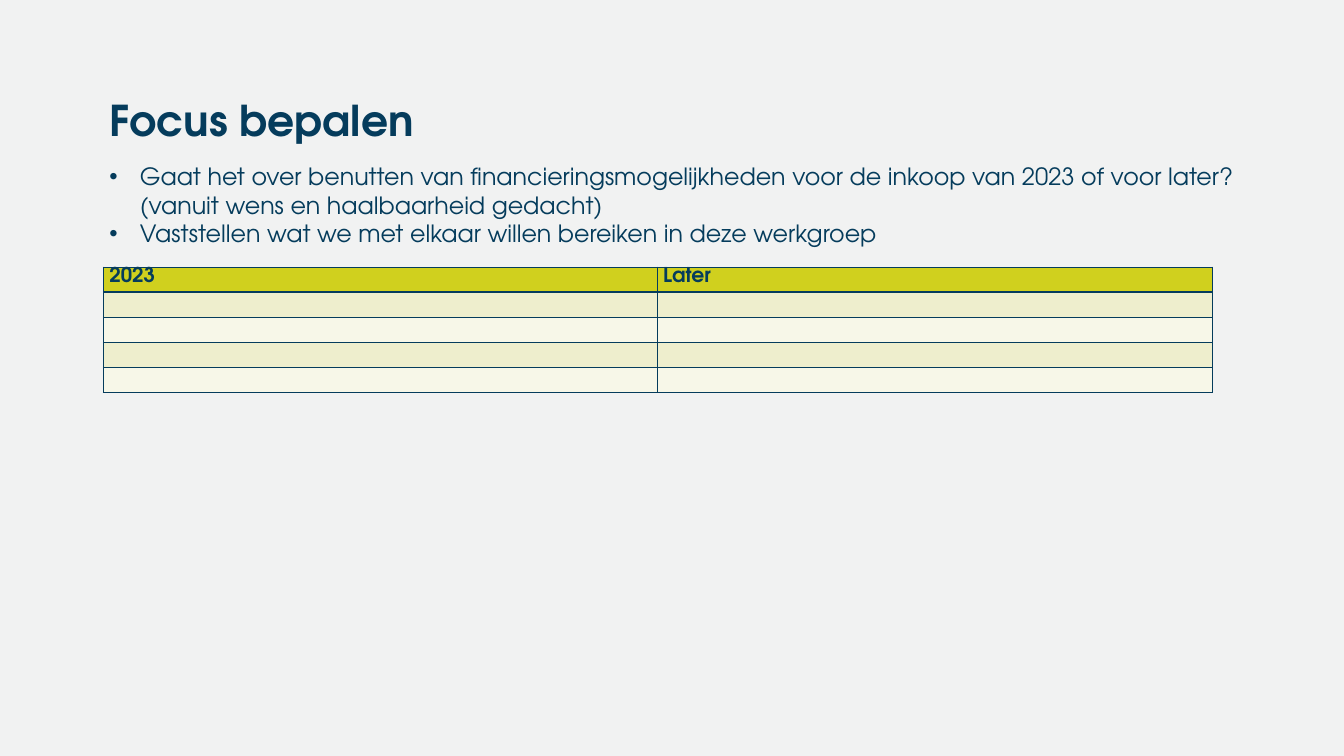
from lxml import etree
from pptx import Presentation
from pptx import util as u
from pptx.dml.color import RGBColor
from pptx.enum import text
from pptx.oxml import ns

NAVY = RGBColor(0x05, 0x3C, 0x5C)
LIME = RGBColor(0xD0, 0xD0, 0x1E)
SAND = RGBColor(0xEE, 0xEE, 0xCD)
CREAM = RGBColor(0xF7, 0xF7, 0xE8)
GREY = RGBColor(0xF1, 0xF2, 0xF2)
FONT = "TeX Gyre Adventor"


class Page:
    """Holds the style and the current slide."""

    def __init__(self, deck):
        self.slide = deck.slides.add_slide(deck.slide_layouts[6])
        fill = self.slide.background.fill
        fill.solid()
        fill.fore_color.rgb = GREY

    def style(self, para, size, bold=False):
        for run in para.runs:
            run.font.name = FONT
            run.font.size = u.Pt(size)
            run.font.bold = bold
            run.font.color.rgb = NAVY

    def bullet(self, para):
        props = para._p.get_or_add_pPr()
        props.set("marL", str(u.Inches(0.5)))
        props.set("indent", str(u.Inches(-0.5)))
        color = etree.SubElement(props, ns.qn("a:buClr"))
        etree.SubElement(color, ns.qn("a:srgbClr"), val=str(NAVY))
        etree.SubElement(props, ns.qn("a:buFont"), typeface="Arial")
        etree.SubElement(props, ns.qn("a:buChar"), char="•")

    def words(self, lines, top, height, size, bold=False, dots=False,
              anchor=text.MSO_ANCHOR.TOP):
        box = self.slide.shapes.add_textbox(
            u.Inches(1.69), u.Inches(top), u.Inches(18.78), u.Inches(height))
        frame = box.text_frame
        frame.word_wrap = True
        frame.vertical_anchor = anchor
        frame.text = "\n".join(lines)
        for para in frame.paragraphs:
            if dots:
                self.bullet(para)
            self.style(para, size, bold)

    def edge(self, cell, side, width):
        props = cell._tc.get_or_add_tcPr()
        line = etree.SubElement(props, ns.qn("a:ln" + side),
                                w=str(u.Pt(width)))
        fill = etree.SubElement(line, ns.qn("a:solidFill"))
        etree.SubElement(fill, ns.qn("a:srgbClr"), val=str(NAVY))

    def table(self, heads, rows, left, top, widths, height):
        grid = self.slide.shapes.add_table(
            rows, len(heads), u.Inches(left), u.Inches(top),
            u.Inches(sum(widths)), u.Inches(rows * height)).table
        for col, width in zip(grid.columns, widths):
            col.width = u.Inches(width)
        for r, row in enumerate(grid.rows):
            row.height = u.Inches(height)
            for c, cell in enumerate(row.cells):
                cell.margin_top = cell.margin_bottom = 0
                # Borders go before the fill; the header rule is thicker
                for side in "LRTB":
                    thick = (r, side) in ((0, "B"), (1, "T"))
                    self.edge(cell, side, 3 if thick else 1)
                cell.fill.solid()
                band = SAND if r % 2 else CREAM
                cell.fill.fore_color.rgb = band if r else LIME
                if r == 0:
                    cell.text_frame.text = heads[c]
                    self.style(cell.text_frame.paragraphs[0], 24, True)


def main():
    deck = Presentation()
    deck.slide_width = u.Inches(21.99)
    deck.slide_height = u.Inches(12.37)
    page = Page(deck)

    # Title
    page.words(["Focus bepalen"], 0.43, 2, 50, bold=True,
               anchor=text.MSO_ANCHOR.BOTTOM)

    # Questions
    page.words([
        "Gaat het over benutten van financieringsmogelijkheden voor de "
        "inkoop van 2023 of voor later? (vanuit wens en haalbaarheid gedacht)",
        "Vaststellen wat we met elkaar willen bereiken in deze werkgroep",
    ], 2.6, 7.27, 28, dots=True)

    # Planning table
    page.table(["2023", "Later"], 5, 1.69, 4.37, [9.06, 9.09], 0.41)

    deck.save("out.pptx")


if __name__ == "__main__":
    main()
